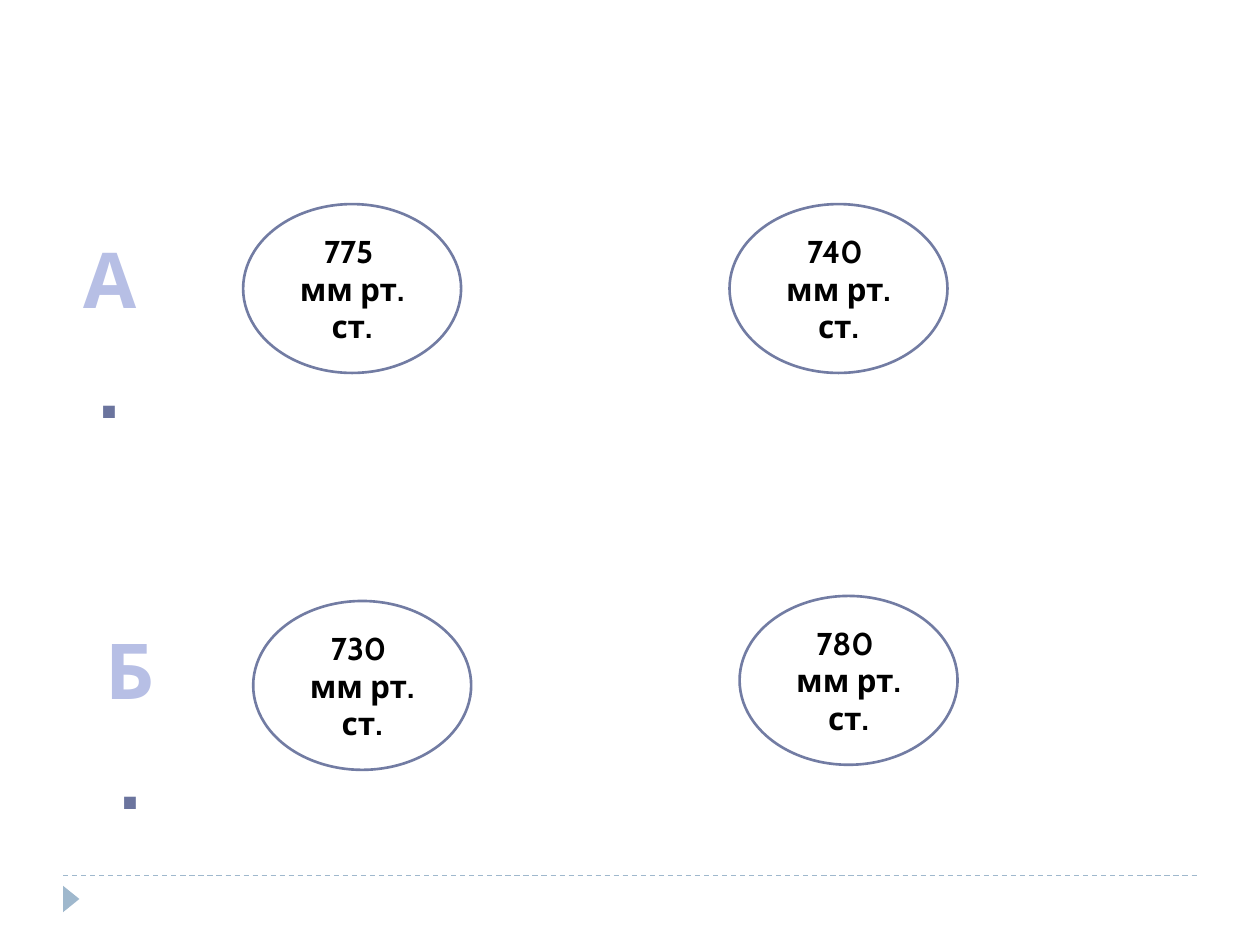
from pptx import Presentation
from pptx.dml.color import RGBColor
from pptx.enum.dml import MSO_LINE_DASH_STYLE as Dash
from pptx.enum.shapes import MSO_CONNECTOR, MSO_SHAPE
from pptx.enum.text import MSO_ANCHOR, PP_ALIGN
from pptx.oxml.ns import qn
from pptx.util import Inches, Pt
from lxml.etree import SubElement

FONT = "Cabin"
COLORS = {
    "background": "FFFFFF",
    "oval_line": "727CA3",
    "footer": "9FB8CD",
    "text": "000000",
    "letter": "B7BFE5",
    "dot": "6B749E",
}
PRESSURES = [
    ("775 ", 1.93, 1.62),
    ("740 ", 5.79, 1.62),
    ("730 ", 2.01, 4.77),
    ("780 ", 5.87, 4.73),
]
ROW_LABELS = [("А", 0.48, 1.79, 0.78), ("Б", 0.66, 4.89, 0.75)]


def color(name):
    return RGBColor.from_string(COLORS[name])


def style_span(span, size, color_name):
    span.font.name = FONT
    span.font.size = Pt(size)
    span.font.bold = True
    span.font.color.rgb = color(color_name)


def add_footer(page):
    """Dashed rule with a small arrowhead triangle below it."""
    rule = page.shapes.add_connector(
        MSO_CONNECTOR.STRAIGHT, Inches(0.5), Inches(6.95), Inches(9.5), Inches(6.95))
    rule.line.color.rgb = color("footer")
    rule.line.width = Pt(0.75)
    rule.line.dash_style = Dash.DASH
    SubElement(rule._element.spPr, qn("a:effectLst"))

    marker = page.shapes.add_shape(
        MSO_SHAPE.ISOSCELES_TRIANGLE, Inches(0.46), Inches(7.07), Inches(0.21), Inches(0.13))
    marker.rotation = 90
    marker.shadow.inherit = False
    marker.fill.solid()
    marker.fill.fore_color.rgb = color("footer")
    marker.line.fill.background()


def add_pressure_oval(page, value, left, top):
    oval = page.shapes.add_shape(
        MSO_SHAPE.OVAL, Inches(left), Inches(top), Inches(1.73), Inches(1.34))
    oval.shadow.inherit = False
    oval.fill.solid()
    oval.fill.fore_color.rgb = color("background")
    oval.line.color.rgb = color("oval_line")
    oval.line.width = Pt(1.5)
    frame = oval.text_frame
    frame.word_wrap = True
    frame.vertical_anchor = MSO_ANCHOR.MIDDLE
    frame.text = f"{value}\nмм рт. ст."
    for para in frame.paragraphs:
        para.alignment = PP_ALIGN.CENTER
        style_span(para.runs[0], 18, "text")


def add_row_label(page, letter, left, top, width):
    """Large letter whose dot wraps below it in the narrow box."""
    box = page.shapes.add_textbox(Inches(left), Inches(top), Inches(width), Inches(1.01))
    box.text_frame.word_wrap = True
    para = box.text_frame.paragraphs[0]
    para.alignment = PP_ALIGN.CENTER
    for text, size, color_name in ((letter, 44, "letter"), (".", 54, "dot")):
        span = para.add_run()
        span.text = text
        style_span(span, size, color_name)


def main():
    deck = Presentation()
    deck.slide_width, deck.slide_height = Inches(10), Inches(7.5)
    page = deck.slides.add_slide(deck.slide_layouts[6])
    page.background.fill.solid()
    page.background.fill.fore_color.rgb = color("background")
    add_footer(page)
    for pressure in PRESSURES:
        add_pressure_oval(page, *pressure)
    for label in ROW_LABELS:
        add_row_label(page, *label)
    deck.save("out.pptx")


if __name__ == "__main__":
    main()
